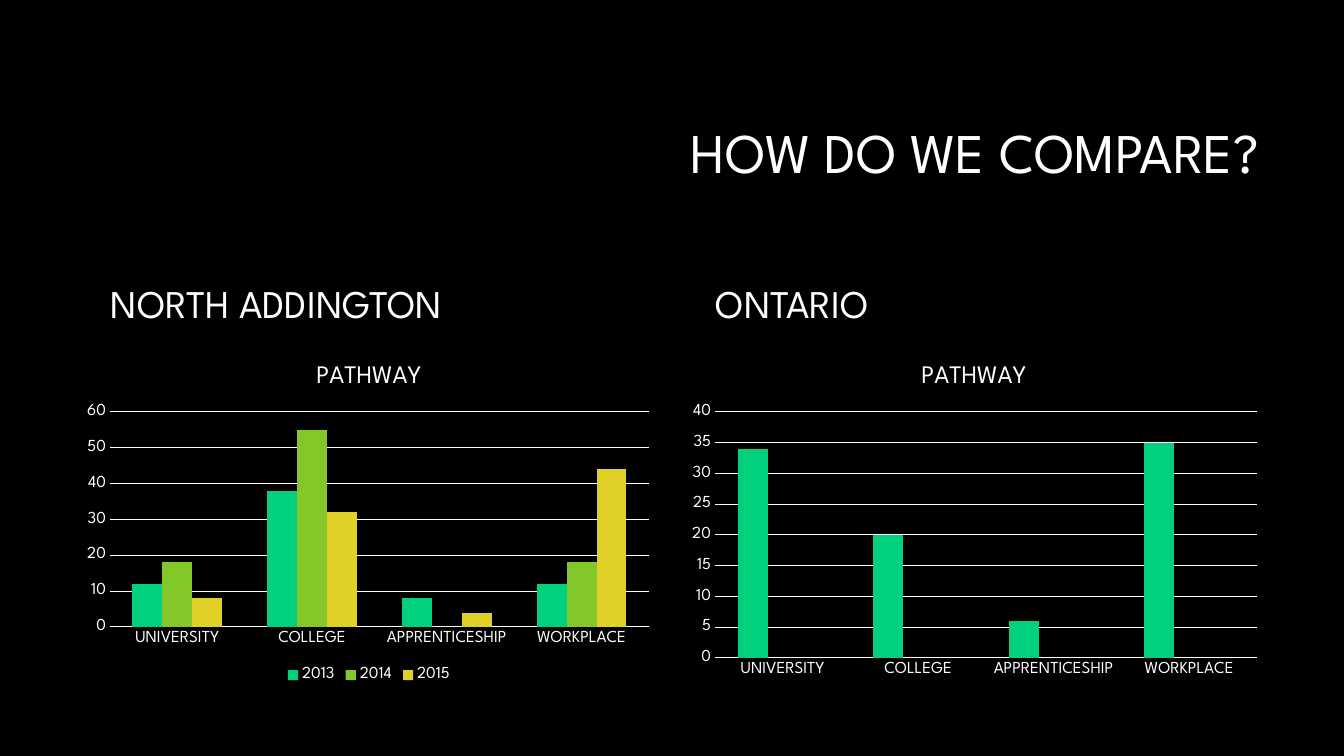
from lxml import etree
from pptx import Presentation
from pptx.chart.data import CategoryChartData
from pptx.dml.color import RGBColor
from pptx.enum.chart import XL_CHART_TYPE as ChartType, XL_LEGEND_POSITION as LegendPos
from pptx.enum.chart import XL_TICK_MARK as TickMark
from pptx.enum.text import MSO_ANCHOR as Anchor, PP_ALIGN as Align
from pptx.oxml.ns import qn
from pptx.util import Emu, Pt

EMU_PER_INCH, PX_PER_INCH = 914400, 100.8
FONT = "League Spartan"
BLACK = RGBColor(0x00, 0x00, 0x00)
WHITE = RGBColor(0xFF, 0xFF, 0xFF)
GREEN = RGBColor(0x01, 0xD1, 0x7D)
LIME = RGBColor(0x84, 0xC7, 0x2A)
YELLOW = RGBColor(0xE1, 0xD1, 0x26)
YEAR_COLORS = (GREEN, LIME, YELLOW)
PATHWAYS = ("UNIVERSITY", "COLLEGE", "APPRENTICESHIP", "WORKPLACE")


def px(length):
    return Emu(round(length * EMU_PER_INCH / PX_PER_INCH))


def style_font(font, size):
    font.name = FONT
    font.size = Pt(size)
    font.bold = False
    font.color.rgb = WHITE


def add_heading(slide, box, text, size, anchor, align=Align.LEFT):
    frame = slide.shapes.add_textbox(*map(px, box)).text_frame
    frame.word_wrap = True
    frame.vertical_anchor = anchor
    line = frame.paragraphs[0]
    line.alignment = align
    line.line_spacing = 0.9
    run = line.add_run()
    run.text = text
    style_font(run.font, size)


def place_plot(chart, box, plot_box):
    """Fix the inner plot area, given in slide px, within the chart box."""
    left, top, width, height = box
    x, y, w, h = plot_box
    plot_area = chart._chartSpace.chart.plotArea
    for old in plot_area.findall(qn("c:layout")):
        plot_area.remove(old)
    layout = etree.Element(qn("c:layout"))
    manual = etree.SubElement(layout, qn("c:manualLayout"))
    settings = (
        ("layoutTarget", "inner"), ("xMode", "edge"), ("yMode", "edge"),
        ("x", (x - left) / width), ("y", (y - top) / height),
        ("w", w / width), ("h", h / height),
    )
    for tag, value in settings:
        etree.SubElement(manual, qn(f"c:{tag}")).set("val", str(value))
    plot_area.insert(0, layout)


def style_axes(chart, top_value, step):
    for axis in (chart.category_axis, chart.value_axis):
        axis.major_tick_mark = axis.minor_tick_mark = TickMark.NONE
        axis.format.line.fill.background()
        style_font(axis.tick_labels.font, 12)
    values = chart.value_axis
    values.minimum_scale, values.maximum_scale = 0, top_value
    values.major_unit = step
    values.has_major_gridlines = True
    grid = values.major_gridlines.format.line
    grid.color.rgb = WHITE
    grid.width = Pt(0.75)


def add_pathway_chart(slide, box, plot_box, series, top_value, step, has_legend):
    pathway_data = CategoryChartData()
    pathway_data.categories = PATHWAYS
    for name, values in series:
        pathway_data.add_series(name, values)
    chart = slide.shapes.add_chart(
        ChartType.COLUMN_CLUSTERED, *map(px, box), pathway_data).chart
    style_font(chart.font, 10)

    # Title
    chart.has_title = True
    title_run = chart.chart_title.text_frame.paragraphs[0].add_run()
    title_run.text = "PATHWAY"
    style_font(title_run.font, 18)
    chart.chart_title.include_in_layout = False

    # Columns
    columns = chart.plots[0]
    columns.gap_width = 150
    columns.overlap = 0
    columns.vary_by_categories = False
    for year, color in zip(columns.series, YEAR_COLORS):
        year.format.fill.solid()
        year.format.fill.fore_color.rgb = color
    style_axes(chart, top_value, step)
    place_plot(chart, box, plot_box)

    # Legend
    chart.has_legend = has_legend
    if has_legend:
        chart.legend.position = LegendPos.BOTTOM
        chart.legend.include_in_layout = False
        style_font(chart.legend.font, 12)


def main():
    deck = Presentation()
    deck.slide_width, deck.slide_height = px(1344), px(756)
    slide = deck.slides.add_slide(deck.slide_layouts[6])
    slide.background.fill.solid()
    slide.background.fill.fore_color.rgb = BLACK

    # Headings
    add_heading(slide, (320, 84, 949, 143), "HOW DO WE COMPARE?", 40,
                Anchor.MIDDLE, Align.RIGHT)
    add_heading(slide, (101, 241, 560, 91), "NORTH ADDINGTON", 28, Anchor.BOTTOM)
    add_heading(slide, (706, 241, 562, 91), "ONTARIO", 28, Anchor.BOTTOM)

    # School results by year
    school = (("2013", (12, 38, 8, 12)),
              ("2014", (18, 55, 0, 18)),
              ("2015", (8, 32, 4, 44)))
    add_pathway_chart(slide, (76, 346, 586, 341), (110, 412, 539, 215),
                      school, 60, 10, True)

    # Provincial results, with two empty series that keep the column width
    no_values = (None,) * len(PATHWAYS)
    province = (("Series 1", (34, 20, 6, 35)),
                ("Series 2", no_values),
                ("Series 3", no_values))
    add_pathway_chart(slide, (680, 346, 588, 341), (715, 412, 542, 246),
                      province, 40, 5, False)

    deck.save("out.pptx")


if __name__ == "__main__":
    main()
